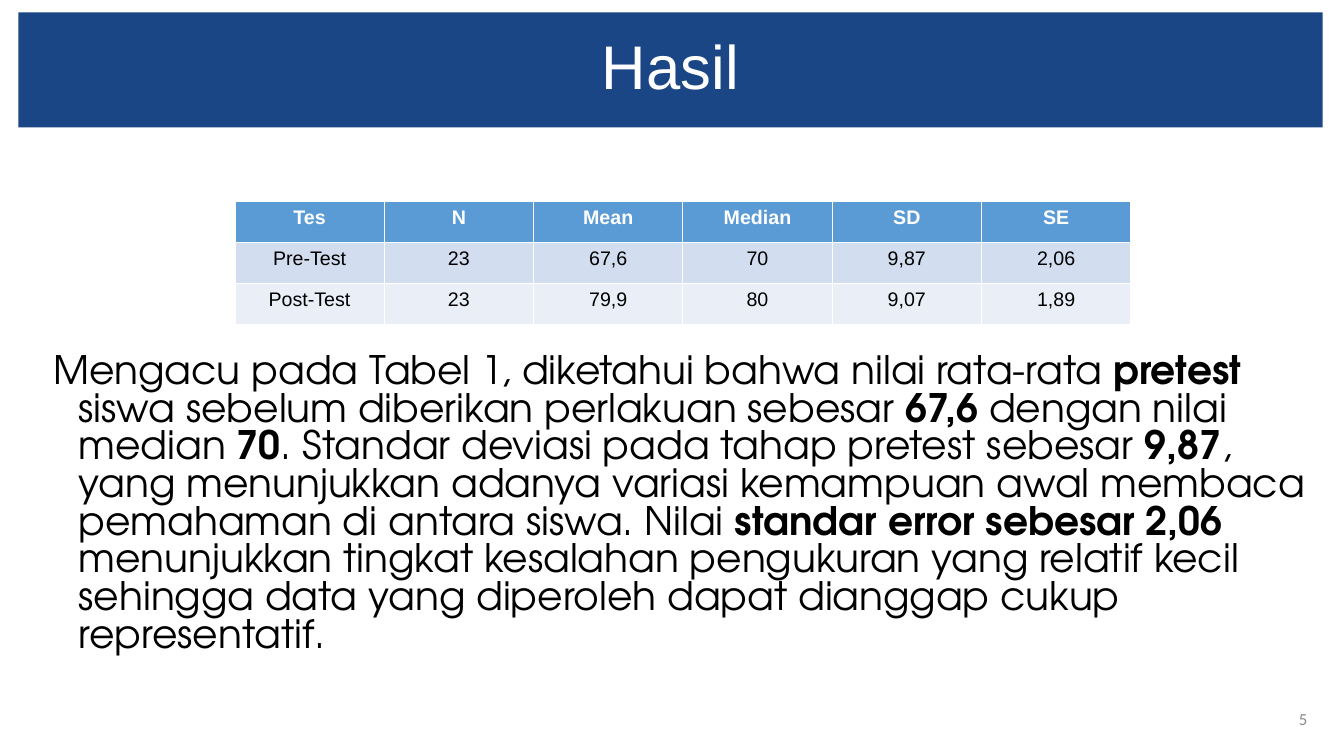
"""Build the results slide with its test score table and commentary."""
import pptx
import pptx.dml.color
import pptx.enum.text
import pptx.oxml.ns
import pptx.util
from lxml import etree

Cm = pptx.util.Cm
Pt = pptx.util.Pt
Align = pptx.enum.text.PP_ALIGN
Anchor = pptx.enum.text.MSO_ANCHOR
NAVY = pptx.dml.color.RGBColor(0x1B, 0x46, 0x85)
HEADER_BLUE = pptx.dml.color.RGBColor(0x5B, 0x9B, 0xD5)
BAND_DARK = pptx.dml.color.RGBColor(0xD2, 0xDE, 0xEF)
BAND_LIGHT = pptx.dml.color.RGBColor(0xEA, 0xEF, 0xF7)
WHITE = pptx.dml.color.RGBColor(0xFF, 0xFF, 0xFF)
BLACK = pptx.dml.color.RGBColor(0, 0, 0)
GREY = pptx.dml.color.RGBColor(0x88, 0x88, 0x88)

SCORES = [
    ["Tes", "N", "Mean", "Median", "SD", "SE"],
    ["Pre-Test", "23", "67,6", "70", "9,87", "2,06"],
    ["Post-Test", "23", "79,9", "80", "9,07", "1,89"],
]
COMMENTARY = [
    ("Mengacu pada Tabel 1, diketahui bahwa nilai rata-rata ", False),
    ("pretest", True),
    (" siswa sebelum diberikan perlakuan sebesar ", False),
    ("67,6", True),
    (" dengan nilai median ", False),
    ("70", True),
    (". Standar deviasi pada tahap pretest sebesar ", False),
    ("9,87", True),
    (", yang menunjukkan adanya variasi kemampuan awal membaca "
     "pemahaman di antara siswa. Nilai ", False),
    ("standar error sebesar 2,06", True),
    (" menunjukkan tingkat kesalahan pengukuran yang relatif kecil "
     "sehingga data yang diperoleh dapat dianggap cukup representatif.", False),
]


def apply(target, values):
    """Set every named attribute on the target."""
    for name, value in values.items():
        setattr(target, name, value)


class ResultSlide:
    """Hold the text styles and the current slide."""

    styles = {
        "title": ({"name": "Arial", "size": Pt(44)}, WHITE),
        "body": ({"name": "TeX Gyre Adventor", "size": Pt(28)}, BLACK),
        "header": ({"name": "Arial", "size": Pt(14), "bold": True}, WHITE),
        "score": ({"name": "Arial", "size": Pt(14), "bold": False}, BLACK),
        "number": ({"name": "Calibri", "size": Pt(12)}, GREY),
    }

    def __init__(self, deck):
        """Add a title and content slide to the deck."""
        self.slide = deck.slides.add_slide(deck.slide_layouts[1])

    def add_runs(self, paragraph, runs, style, layout):
        """Fill a paragraph with (text, bold) runs in a named style."""
        apply(paragraph, layout)
        values, color = self.styles[style]
        for text, bold in runs:
            run = paragraph.add_run()
            run.text = text
            apply(run.font, {"bold": bold, **values})
            run.font.color.rgb = color

    def place(self, holder, box, frame):
        """Move a text holder and format its frame."""
        apply(holder, dict(zip(("left", "top", "width", "height"), map(Cm, box))))
        apply(holder.text_frame, {
            "word_wrap": True,
            "auto_size": pptx.enum.text.MSO_AUTO_SIZE.NONE, **frame})
        return holder.text_frame.paragraphs[0]

    def title(self, text, box):
        """Set the heading on its navy band."""
        heading = self.slide.shapes.title
        heading.fill.solid()
        heading.fill.fore_color.rgb = NAVY
        paragraph = self.place(heading, box, {"vertical_anchor": Anchor.MIDDLE})
        self.add_runs(paragraph, [(text, False)], "title",
                      {"alignment": Align.CENTER, "line_spacing": 0.9})

    def body(self, runs, box, top_inset):
        """Set the commentary with a hanging indent and no bullet."""
        paragraph = self.place(self.slide.placeholders[1], box, {
            "vertical_anchor": Anchor.TOP, "margin_top": Cm(top_inset)})
        properties = paragraph._p.get_or_add_pPr()
        properties.set("marL", str(Cm(1.27)))
        properties.set("indent", str(Cm(-0.64)))
        etree.SubElement(properties, pptx.oxml.ns.qn("a:buNone"))
        self.add_runs(paragraph, runs, "body", {
            "alignment": Align.LEFT, "line_spacing": 0.8, "space_before": Pt(0)})

    def table(self, rows, box):
        """Add the score table with a header and banded rows."""
        scores = self.slide.shapes.add_table(
            len(rows), len(rows[0]), *map(Cm, box)).table
        bands = (HEADER_BLUE, BAND_DARK, BAND_LIGHT)
        for r, (row, band) in enumerate(zip(rows, bands)):
            style = "score" if r else "header"
            for c, text in enumerate(row):
                cell = scores.cell(r, c)
                cell.fill.solid()
                cell.fill.fore_color.rgb = band
                self.add_runs(cell.text_frame.paragraphs[0], [(text, False)],
                              style, {"alignment": Align.CENTER})

    def page_number(self, text, box):
        """Set the slide number in the corner."""
        number = self.slide.shapes.add_textbox(*map(Cm, box))
        paragraph = self.place(number, box, {"vertical_anchor": Anchor.MIDDLE})
        self.add_runs(paragraph, [(text, False)], "number",
                      {"alignment": Align.RIGHT})


def main():
    """Compose and save the slide."""
    deck = pptx.Presentation()
    apply(deck, {"slide_width": Cm(33.87), "slide_height": Cm(19.05)})
    hasil = ResultSlide(deck)
    hasil.title("Hasil", (0.46, 0.31, 32.87, 2.9))
    hasil.body(COMMENTARY, (0.46, 3.43, 32.87, 14.15), 5.5)
    hasil.table(SCORES, (5.92, 5.08, 22.58, 3.1))
    hasil.page_number("5", (31.75, 17.6, 1.45, 1.02))
    deck.save("out.pptx")


if __name__ == "__main__":
    main()
